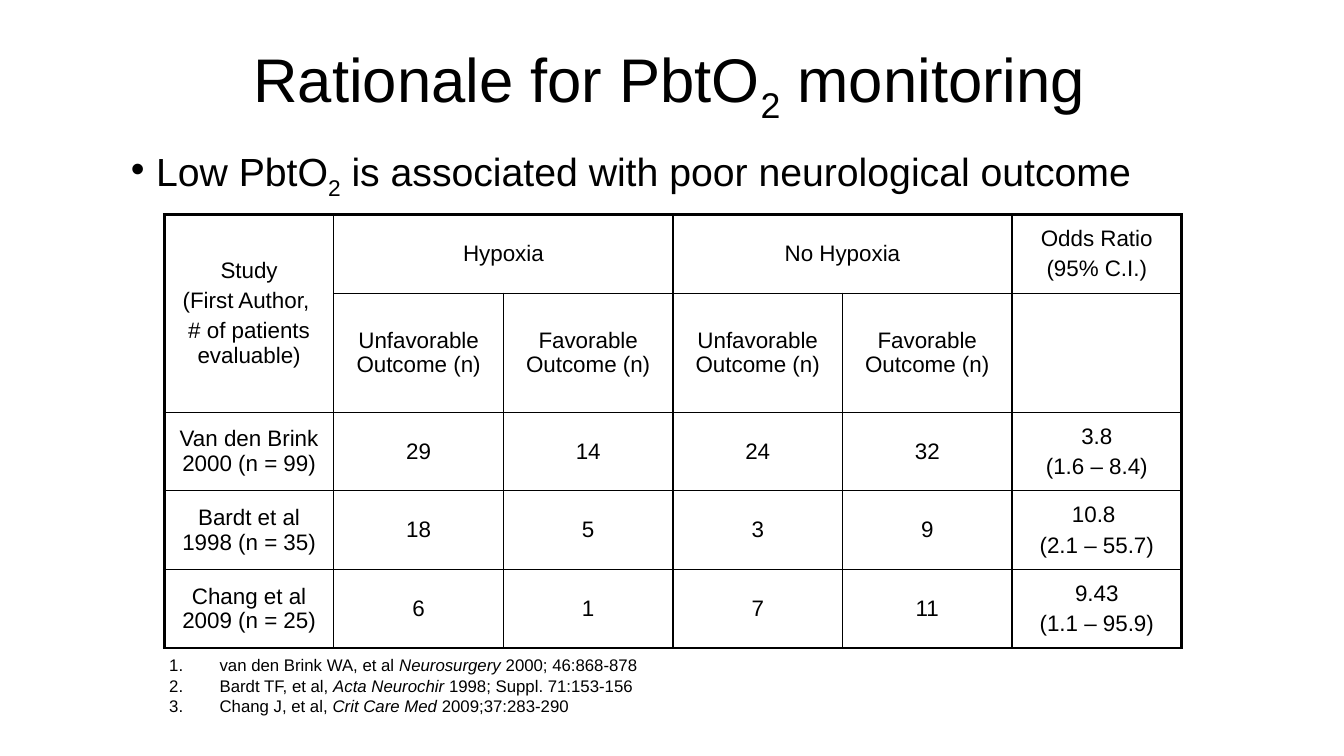
from dataclasses import dataclass

from lxml.etree import SubElement, Element
from pptx import Presentation
from pptx.dml.color import RGBColor
from pptx.enum.text import MSO_ANCHOR, PP_ALIGN
from pptx.oxml.ns import qn
from pptx.util import Inches, Pt


@dataclass(frozen=True)
class Theme:
    font: str = "Arial"
    ink: str = "000000"
    title: int = 44
    body: int = 28
    cell: int = 16
    note: int = 12
    thick: float = 2.25
    thin: float = 1


class Deck:
    """Holds the theme and the current slide, and draws each kind of element."""

    def __init__(self, theme):
        self.theme = theme
        self.file = Presentation()
        self.file.slide_width = Inches(13.33)
        self.file.slide_height = Inches(7.5)
        self.slide = self.file.slides.add_slide(self.file.slide_layouts[6])

    def run(self, para, text, size, style=""):
        run = para.add_run()
        run.text = text
        font = run.font
        font.name, font.size = self.theme.font, Pt(size)
        font.color.rgb = RGBColor.from_string(self.theme.ink)
        if style == "italic":
            font.italic = True
        if style == "sub":
            run._r.get_or_add_rPr().set("baseline", "-25000")

    def bullet(self, para, indent, tag, **attrs):
        props = para._p.get_or_add_pPr()
        props.set("marL", str(Inches(indent)))
        props.set("indent", str(-Inches(indent)))
        SubElement(props, qn("a:buFont"), typeface=self.theme.font)
        SubElement(props, qn(tag), **attrs)

    def box(self, place, anchor=MSO_ANCHOR.TOP):
        frame = self.slide.shapes.add_textbox(*map(Inches, place)).text_frame
        frame.word_wrap = True
        frame.vertical_anchor = anchor
        return frame

    def title(self, place, runs):
        para = self.box(place, MSO_ANCHOR.MIDDLE).paragraphs[0]
        para.alignment = PP_ALIGN.CENTER
        para.line_spacing = 0.9
        for text, style in runs:
            self.run(para, text, self.theme.title, style)

    def body(self, place, runs):
        para = self.box(place).paragraphs[0]
        para.line_spacing = 0.9
        self.bullet(para, 0.25, "a:buChar", char="•")
        for text, style in runs:
            self.run(para, text, self.theme.body, style)

    def notes(self, place, items):
        frame = self.box(place)
        for i, runs in enumerate(items):
            para = frame.add_paragraph() if i else frame.paragraphs[0]
            self.bullet(para, 0.5, "a:buAutoNum", type="arabicPeriod")
            for text, style in zip(runs, ("", "italic", "")):
                self.run(para, text, self.theme.note, style)

    def edges(self, cell, outer):
        props = cell._tc.get_or_add_tcPr()
        for i, (side, edge) in enumerate(zip("LRTB", outer)):
            width = self.theme.thick if edge else self.theme.thin
            line = Element(qn(f"a:ln{side}"), w=str(Pt(width)))
            fill = SubElement(line, qn("a:solidFill"))
            SubElement(fill, qn("a:srgbClr"), val=self.theme.ink)
            props.insert(i, line)

    def cell(self, cell, text):
        cell.vertical_anchor = MSO_ANCHOR.MIDDLE
        cell.margin_top = cell.margin_bottom = Inches(0)
        frame = cell.text_frame
        for i, line in enumerate(text.split("\n") if text else []):
            para = frame.add_paragraph() if i else frame.paragraphs[0]
            para.alignment = PP_ALIGN.CENTER
            if i:
                para.space_before = Pt(3.8)
            self.run(para, line, self.theme.cell)

    def table(self, place, rows, heights, spans):
        high, wide = len(rows), len(rows[0])
        shape = self.slide.shapes.add_table(high, wide, *map(Inches, place))
        grid = shape.table
        grid.first_row = grid.horz_banding = False
        for col in grid.columns:
            col.width = Inches(place[2] / wide)
        for r, (texts, height) in enumerate(zip(rows, heights)):
            grid.rows[r].height = Inches(height)
            for c, text in enumerate(texts):
                cell = grid.cell(r, c)
                cell.fill.background()
                self.edges(cell, (c == 0, c == wide - 1, r == 0, r == high - 1))
                self.cell(cell, text)
        for start, end in spans:
            grid.cell(*start).merge(grid.cell(*end))


def main():
    deck = Deck(Theme())
    deck.title((2.39, 0.17, 8.5, 1.25),
               [("Rationale for PbtO", ""), ("2", "sub"), (" monitoring", "")])
    deck.body((1.2, 1.42, 10.91, 1.17),
              [("Low PbtO", ""), ("2", "sub"),
               (" is associated with poor neurological outcome", "")])
    pair = ["Unfavorable Outcome (n)", "Favorable Outcome (n)"]
    rows = [
        ["Study\n(First Author, \n# of patients evaluable)", "Hypoxia", "",
         "No Hypoxia", "", "Odds Ratio\n(95% C.I.)"],
        ["", *pair, *pair, ""],
        ["Van den Brink 2000 (n = 99)", "29", "14", "24", "32", "3.8\n(1.6 – 8.4)"],
        ["Bardt et al 1998 (n = 35)", "18", "5", "3", "9", "10.8 \n(2.1 – 55.7)"],
        ["Chang et al 2009 (n = 25)", "6", "1", "7", "11", "9.43\n(1.1 – 95.9)"],
    ]
    spans = [((0, 0), (1, 0)), ((0, 1), (0, 2)), ((0, 3), (0, 4))]
    deck.table((1.63, 2.13, 10.09, 4.3), rows,
               [0.78, 1.18, 0.78, 0.78, 0.78], spans)
    deck.notes((1.58, 6.45, 9.67, 1.11), [
        ("van den Brink WA, et al ", "Neurosurgery", " 2000; 46:868-878"),
        ("Bardt TF, et al, ", "Acta Neurochir", " 1998; Suppl. 71:153-156"),
        ("Chang J, et al, ", "Crit Care Med", " 2009;37:283-290"),
    ])
    deck.file.save("out.pptx")


if __name__ == "__main__":
    main()
